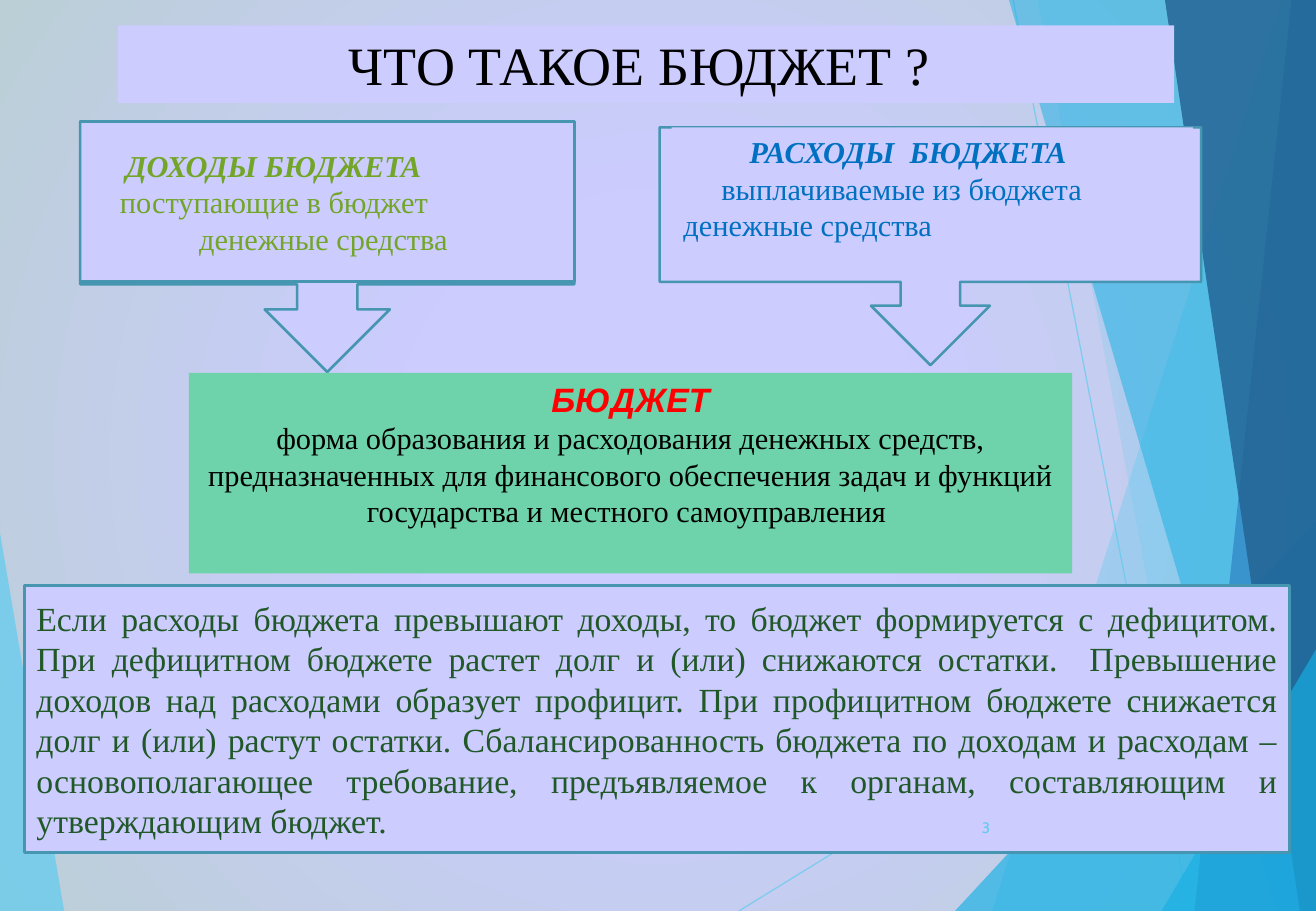
from lxml import etree
from pptx import Presentation
from pptx.dml.color import RGBColor
from pptx.enum.shapes import MSO_CONNECTOR as Connector, MSO_SHAPE as Shape
from pptx.enum.text import MSO_ANCHOR as Anchor, MSO_AUTO_SIZE as AutoSize, PP_ALIGN as Align
from pptx.oxml import parse_xml
from pptx.oxml.ns import nsdecls, qn
from pptx.util import Pt

WIDTH, HEIGHT = 780, 540
LAVENDER, TEAL, SKY, AZURE = "CCCCFF", "4696B1", "5FCBEF", "17B0E4"
GREEN, BLUE, BLACK = "72A528", "0070C0", "000000"
SERIF = "Times New Roman"


def colour(value):
    return RGBColor.from_string(value)


class BudgetSlide:
    """Draw the elements of one slide in a shared style, with lengths in points."""

    def __init__(self, deck):
        self.page = deck.slides.add_slide(deck.slide_layouts[5])
        self.shapes = self.page.shapes

    def background(self, centre, centre_stop, edge):
        self.page.element.cSld.insert(0, parse_xml(
            f'<p:bg {nsdecls("p", "a")}><p:bgPr><a:gradFill rotWithShape="1"><a:gsLst>'
            f'<a:gs pos="{centre_stop * 1000}"><a:srgbClr val="{centre}"/></a:gs>'
            f'<a:gs pos="100000"><a:srgbClr val="{edge}"/></a:gs></a:gsLst>'
            '<a:path path="circle"><a:fillToRect l="50000" t="50000" r="50000" b="50000"/>'
            '</a:path></a:gradFill><a:effectLst/></p:bgPr></p:bg>'))

    def opacity(self, shape, percent):
        for node in shape.element.iter(qn("a:srgbClr")):
            etree.SubElement(node, qn("a:alpha")).set("val", str(percent * 1000))

    def facet(self, points, fill, percent):
        corners = [(Pt(x), Pt(y)) for x, y in points]
        builder = self.shapes.build_freeform(*corners[0], scale=1.0)
        builder.add_line_segments(corners[1:], close=True)
        shape = builder.convert_to_shape()
        self.paint(shape, fill)
        self.opacity(shape, percent)

    def ray(self, start, end):
        line = self.shapes.add_connector(
            Connector.STRAIGHT, *(Pt(value) for value in start + end))
        line.line.color.rgb = colour(SKY)
        line.line.width = Pt(0.75)
        self.opacity(line, 70)
        etree.SubElement(line.element.spPr, qn("a:effectLst"))

    def paint(self, shape, fill=None, outline=None):
        shape.shadow.inherit = False
        if fill:
            shape.fill.solid()
            shape.fill.fore_color.rgb = colour(fill)
        else:
            shape.fill.background()
        if outline:
            shape.line.color.rgb = colour(outline)
            shape.line.width = Pt(1.5)
        else:
            shape.line.fill.background()

    def box(self, area, fill=None, outline=None, kind=Shape.RECTANGLE, adjustments=()):
        shape = self.shapes.add_shape(kind, *(Pt(value) for value in area))
        for index, value in enumerate(adjustments):
            shape.adjustments[index] = value
        self.paint(shape, fill, outline)
        return shape

    def label(self, shape, lines, align=Align.LEFT, anchor=Anchor.TOP):
        frame = shape.text_frame
        frame.text = "\n".join(line["text"] for line in lines)
        frame.word_wrap = True
        frame.auto_size = AutoSize.NONE
        frame.vertical_anchor = anchor
        for para, line in zip(frame.paragraphs, lines):
            para.alignment = align
            left, first = line.get("indent", (0, 0))
            properties = para._p.get_or_add_pPr()
            properties.set("marL", str(Pt(left)))
            properties.set("indent", str(Pt(first)))
            for span in para.runs:
                span.font.name = line.get("font", SERIF)
                span.font.size = Pt(line.get("size", 18))
                span.font.color.rgb = colour(line["colour"])
                span.font.bold = span.font.italic = line.get("strong", False)

    def title(self, area, text):
        shape = self.shapes.title
        shape.left, shape.top, shape.width, shape.height = (Pt(value) for value in area)
        shape.fill.solid()
        shape.fill.fore_color.rgb = colour(LAVENDER)
        self.label(shape, [{"text": text, "size": 32, "colour": BLACK}], Align.CENTER)
        shape.element.getparent().append(shape.element)

    def number(self, area, text):
        shape = self.shapes.add_textbox(*(Pt(value) for value in area))
        line = {"text": text, "size": 9, "font": "Cabin", "colour": SKY}
        self.label(shape, [line], Align.RIGHT, Anchor.MIDDLE)


def main():
    deck = Presentation()
    deck.slide_width, deck.slide_height = Pt(WIDTH), Pt(HEIGHT)
    slide = BudgetSlide(deck)
    slide.background(LAVENDER, 30, "BACFD6")

    slide.facet([(0, 316), (38, HEIGHT), (0, HEIGHT)], SKY, 70)
    slide.ray((438, HEIGHT), (WIDTH, 329))
    slide.ray((600.5, 0), (705, HEIGHT))
    right_facets = [
        (760, 0, 588, SKY, 36),
        (615, 0, 717, SKY, 20),
        (WIDTH, 309, 566, AZURE, 66),
        (598, 0, 757, AZURE, 50),
        (765.5, 0, 708, "2E83C3", 70),
        (690.5, 0, 770.5, "226292", 82),
        (WIDTH, 385, 688.5, AZURE, 66),
    ]
    for top_x, top_y, bottom_x, fill, percent in right_facets:
        slide.facet([(top_x, top_y), (bottom_x, HEIGHT), (WIDTH, HEIGHT), (WIDTH, top_y)],
                    fill, percent)

    slide.title((70, 15, 626, 46), "ЧТО ТАКОЕ БЮДЖЕТ ? ")

    note = slide.box((14.5, 347, 750, 158.5), LAVENDER, TEAL)
    slide.label(note, [{
        "text": "Если расходы бюджета превышают доходы, то бюджет формируется с дефицитом. "
                "При дефицитном бюджете растет долг и (или) снижаются остатки.  Превышение "
                "доходов над расходами образует профицит. При профицитном бюджете снижается "
                "долг и (или) растут остатки. Сбалансированность бюджета по доходам и "
                "расходам – основополагающее требование, предъявляемое к органам, "
                "составляющим и утверждающим бюджет.",
        "size": 20, "colour": "215828"}], Align.JUSTIFY, Anchor.MIDDLE)

    slide.box((47.5, 72, 293, 148.5), LAVENDER, TEAL, Shape.DOWN_ARROW_CALLOUT,
              (0.24, 0.25, 0.25, 0.65))
    slide.box((391, 75.5, 321, 141), LAVENDER, TEAL, Shape.DOWN_ARROW_CALLOUT)

    expenses = slide.box((398, 75.5, 309, 73), LAVENDER)
    slide.label(expenses, [
        {"text": "РАСХОДЫ  БЮДЖЕТА", "colour": BLUE, "strong": True, "indent": (39, 0)},
        {"text": "выплачиваемые из бюджета\vденежные средства", "colour": BLUE,
         "indent": (0, 22.5)}])

    budget = slide.box((112, 221, 523.5, 119), "6ED2AA")
    slide.label(budget, [
        {"text": "БЮДЖЕТ", "size": 20, "font": "Arial", "colour": "FF0000", "strong": True},
        {"text": "форма образования и расходования денежных средств, предназначенных для "
                 "финансового обеспечения задач и функций государства и местного "
                 "самоуправления ", "colour": BLACK}], Align.CENTER)

    income = slide.box((47.5, 72, 293, 95), None, TEAL, Shape.ROUNDED_RECTANGLE, (0,))
    slide.label(income, [
        {"text": "ДОХОДЫ БЮДЖЕТА", "colour": GREEN, "strong": True, "indent": (20, 0)},
        {"text": "поступающие в бюджет\vденежные средства", "colour": GREEN,
         "indent": (63.5, -47)}], anchor=Anchor.MIDDLE)

    slide.number((550, 476, 44, 29), "3")
    deck.save("out.pptx")


if __name__ == "__main__":
    main()
